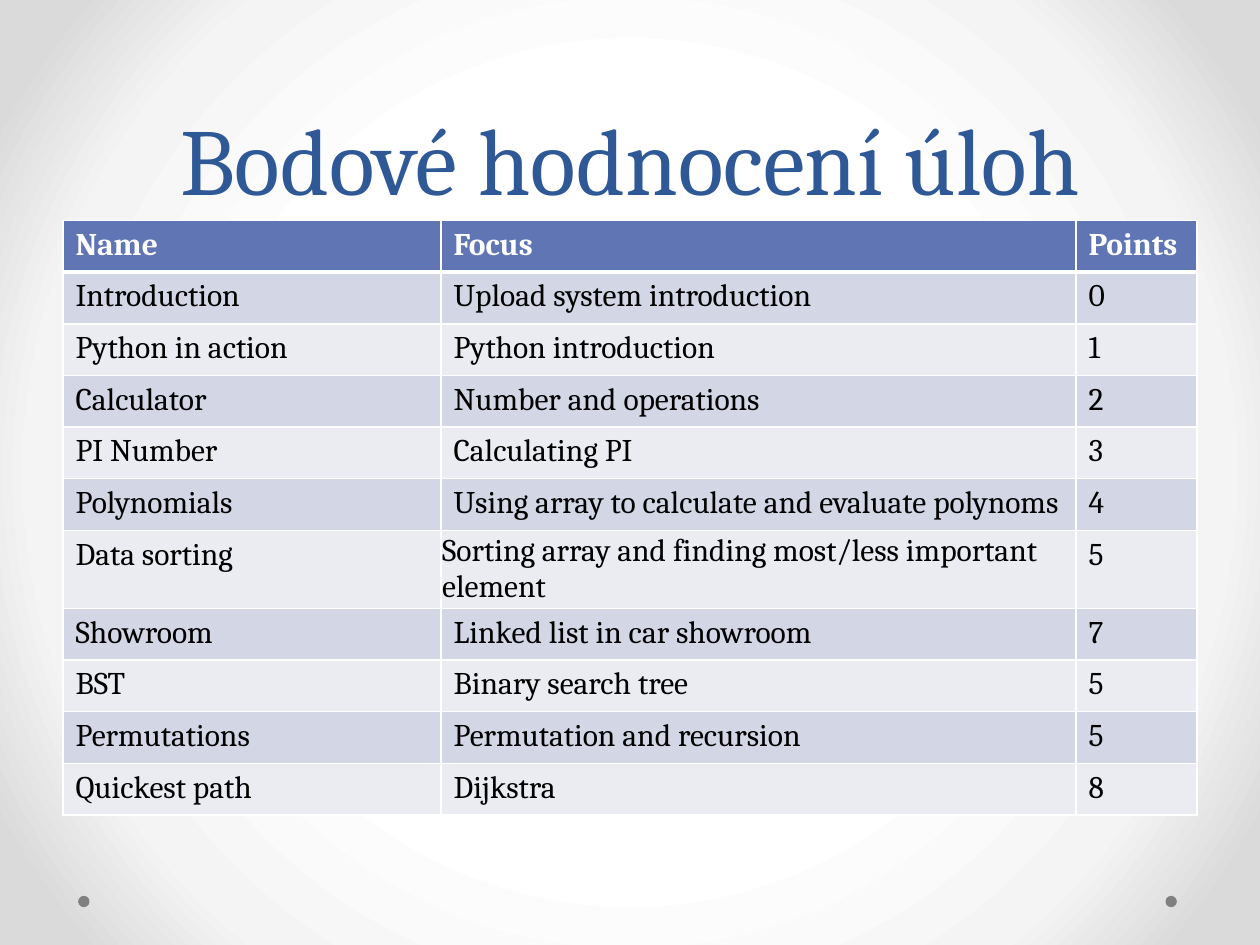
import pptx
import pptx.dml.color
import pptx.enum.shapes
import pptx.enum.text
import pptx.oxml
import pptx.oxml.ns
import pptx.util

Inches, Pt = pptx.util.Inches, pptx.util.Pt
Align, Anchor = pptx.enum.text.PP_ALIGN, pptx.enum.text.MSO_ANCHOR
NS = pptx.oxml.ns.nsdecls("a")
INK = {"title": "2F5897", "head": "6076B4", "odd": "D2D6E5", "even": "EAECF2",
       "line": "FFFFFF", "text": "000000", "dot": "808080"}
GLOW = [(0, "FFFFFF"), (50, "FFFFFF"), (76, "F4F4F4"), (92, "DADADA"), (100, "DADADA")]
COLS = [3, 5.04, 0.96]
ROW = 0.41
ROWS = [
    ("Name", "Focus", "Points"),
    ("Introduction", "Upload system introduction", "0"),
    ("Python in action", "Python introduction", "1"),
    ("Calculator", "Number and operations", "2"),
    ("PI Number", "Calculating PI", "3"),
    ("Polynomials", "Using array to calculate and evaluate polynoms", "4"),
    ("Data sorting", "Sorting array and finding most/less important element", "5"),
    ("Showroom", "Linked list in car showroom", "7"),
    ("BST", "Binary search tree", "5"),
    ("Permutations", "Permutation and recursion", "5"),
    ("Quickest path", "Dijkstra", "8"),
]
TIGHT = (6, 1)  # the cell with narrow margins


def rgb(name):
    return pptx.dml.color.RGBColor.from_string(INK[name])


def write(frame, text, size=18, color="text", bold=False, align=None, lead=None):
    par = frame.paragraphs[0]
    par.alignment = align
    par.line_spacing = lead
    run = par.add_run()
    run.text = text
    run.font.name = "Cambria"
    run.font.size = Pt(size)
    run.font.bold = bold
    run.font.color.rgb = rgb(color)


def backdrop(slide):
    slide.background.fill.gradient()
    grad = next(slide.element.iter(pptx.oxml.ns.qn("a:gradFill")))
    stops = "".join(f'<a:gs pos="{pos * 1000}"><a:srgbClr val="{color}"/></a:gs>'
                    for pos, color in GLOW)
    new = pptx.oxml.parse_xml(
        f'<a:gradFill {NS} rotWithShape="1"><a:gsLst>{stops}</a:gsLst>'
        '<a:path path="circle"><a:fillToRect l="50000" t="50000" r="50000" b="50000"/>'
        '</a:path></a:gradFill>')
    grad.getparent().replace(grad, new)


def dots(slide, left, top, width, size):
    """Put a dot at each end of the given strip."""
    for x in (left, left + width - size):
        dot = slide.shapes.add_shape(
            pptx.enum.shapes.MSO_SHAPE.OVAL,
            Inches(x), Inches(top), Inches(size), Inches(size))
        dot.shadow.inherit = False
        dot.fill.solid()
        dot.fill.fore_color.rgb = rgb("dot")
        dot.line.fill.background()


def title(slide, left, top, width, height, text):
    box = slide.shapes.add_textbox(Inches(left), Inches(top), Inches(width), Inches(height))
    frame = box.text_frame
    frame.word_wrap = True
    frame.vertical_anchor = Anchor.BOTTOM
    write(frame, text, size=54, color="title", align=Align.CENTER, lead=Pt(58))


def border(cell, **widths):
    props = cell._tc.get_or_add_tcPr()
    for side, width in widths.items():
        props.append(pptx.oxml.parse_xml(
            f'<a:ln{side} {NS} w="{Pt(width)}"><a:solidFill>'
            f'<a:srgbClr val="{INK["line"]}"/></a:solidFill></a:ln{side}>'))


def scores(slide, left, top):
    grid = slide.shapes.add_table(
        len(ROWS), len(COLS), Inches(left), Inches(top),
        Inches(sum(COLS)), Inches(ROW * len(ROWS))).table
    for col, width in zip(grid.columns, COLS):
        col.width = Inches(width)
    for r, words in enumerate(ROWS):
        grid.rows[r].height = Inches(ROW)
        head = r == 0
        for c, text in enumerate(words):
            cell = grid.cell(r, c)
            border(cell, L=1, R=1, T=3 if r == 1 else 1, B=3 if head else 1)
            cell.fill.solid()
            cell.fill.fore_color.rgb = rgb("head" if head else "odd" if r % 2 else "even")
            if (r, c) == TIGHT:
                cell.vertical_anchor = Anchor.MIDDLE
                cell.margin_left = cell.margin_right = Inches(0.01)
                cell.margin_top = cell.margin_bottom = Inches(0.01)
            write(cell.text_frame, text, color="line" if head else "text", bold=head)


def main():
    deck = pptx.Presentation()
    deck.slide_width, deck.slide_height = Inches(10), Inches(7.5)
    slide = deck.slides.add_slide(deck.slide_layouts[6])
    backdrop(slide)
    dots(slide, 0.62, 7.11, 8.72, 0.09)
    title(slide, 0.5, 0, 9, 1.75, "Bodové hodnocení úloh")
    scores(slide, 0.5, 1.75)
    deck.save("out.pptx")


if __name__ == "__main__":
    main()
